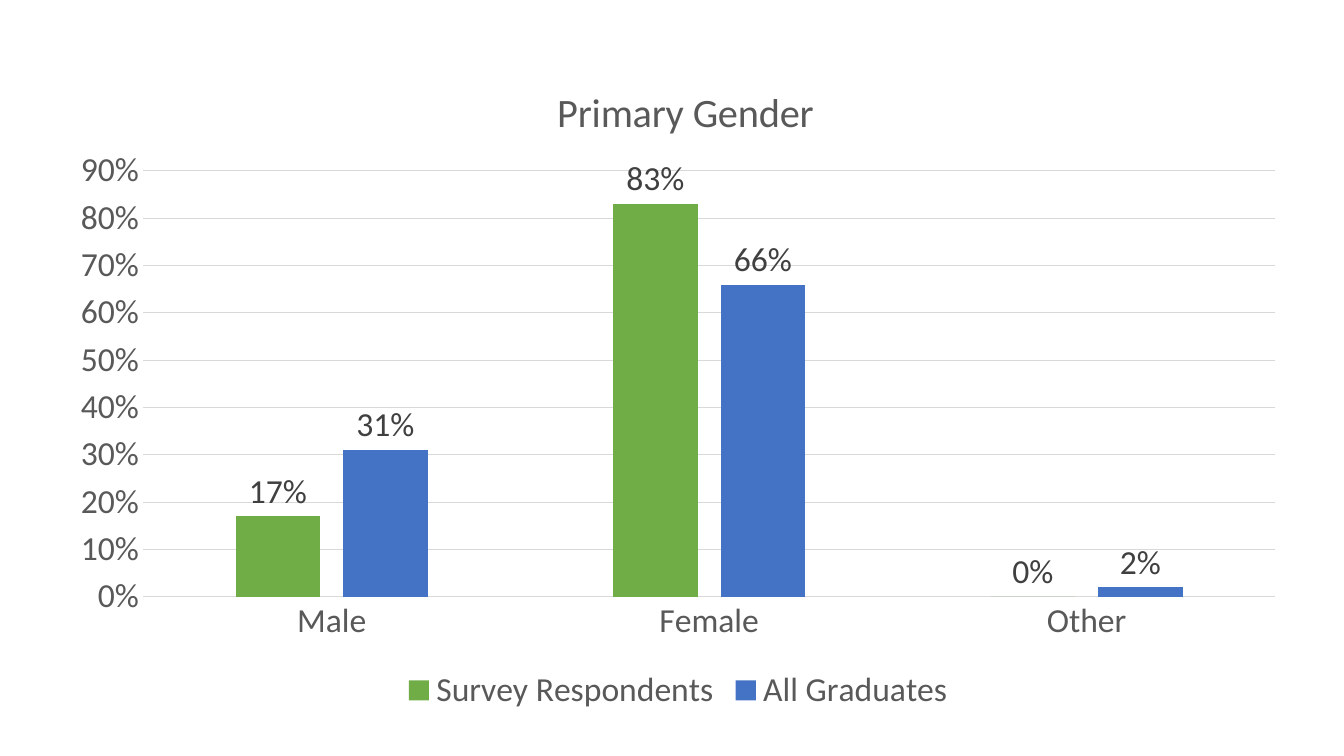
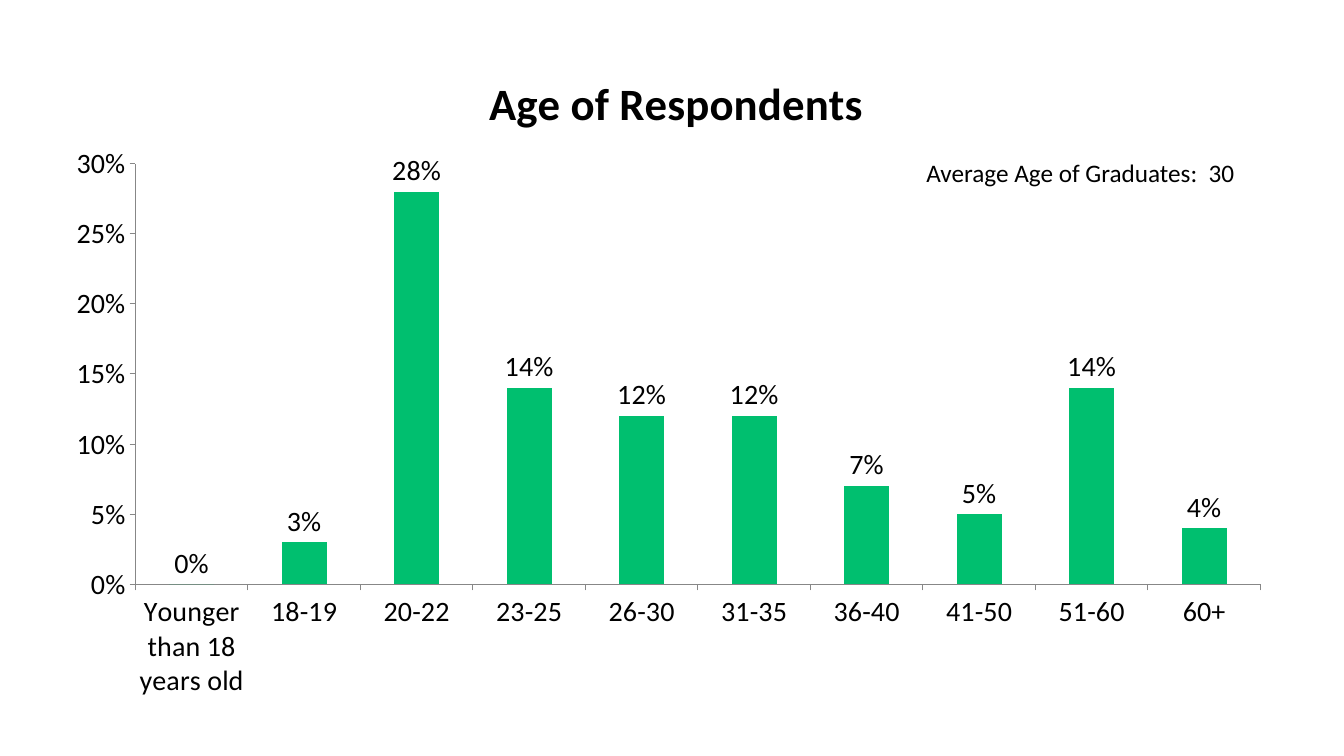
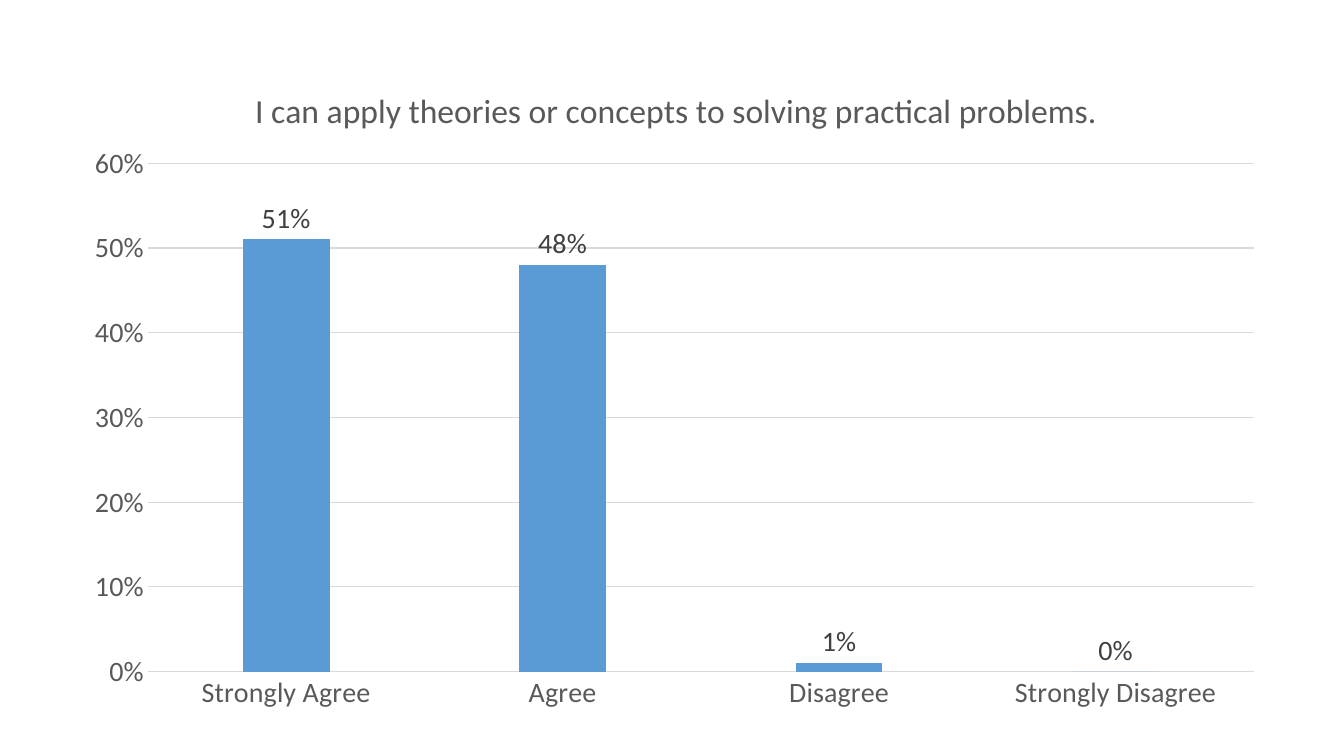
from lxml import etree
from pptx import Presentation
from pptx import util as u
from pptx.chart import data as chart_data
from pptx.dml.color import RGBColor
from pptx.enum import chart as ch, text
from pptx.oxml import ns

# Shared look
FONT = "Calibri"
BLACK = RGBColor(0x00, 0x00, 0x00)
TITLE_GREY = RGBColor(0x59, 0x59, 0x59)
LABEL_GREY = RGBColor(0x40, 0x40, 0x40)
GRID_GREY = RGBColor(0xD9, 0xD9, 0xD9)
AXIS_GREY = RGBColor(0x87, 0x87, 0x87)
LEAF = RGBColor(0x70, 0xAD, 0x47)
BLUE = RGBColor(0x44, 0x72, 0xC4)
EMERALD = RGBColor(0x00, 0xBF, 0x6F)
SKY = RGBColor(0x5B, 0x9B, 0xD5)

SOFT = {"text": TITLE_GREY, "label": LABEL_GREY, "line": GRID_GREY, "grid": True,
        "tick": ch.XL_TICK_MARK.NONE, "gap": 219, "overlap": -27, "bold": False}
PLAIN = {"text": BLACK, "label": BLACK, "line": AXIS_GREY, "grid": False,
         "tick": ch.XL_TICK_MARK.OUTSIDE, "gap": 150, "overlap": 0, "bold": True}

# Places are percentages of the slide: left, top, width, height
CHARTS = [
    {"title": "Primary Gender", "title_size": 28.8, "size": 24, "style": SOFT,
     "frame": (4.13, 6.13, 92.65, 88.8), "plot": (10.64, 22.62, 84.26, 56.35),
     "title_at": (40.92, 10.32), "top": 0.9, "step": 0.1, "legend": True,
     "categories": ["Male", "Female", "Other"],
     "series": [("Survey Respondents", LEAF, (0.17, 0.83, 0)),
                ("All Graduates", BLUE, (0.31, 0.66, 0.02))]},
    {"title": "Age of Respondents", "title_size": 32, "size": 20, "style": PLAIN,
     "frame": (3.83, 4.13, 91.82, 90), "plot": (10.08, 21.63, 83.71, 55.69),
     "title_at": (35.79, 8.47), "top": 0.3, "step": 0.05, "legend": False,
     "categories": ["Younger than 18 years old", "18-19", "20-22", "23-25", "26-30",
                    "31-35", "36-40", "41-50", "51-60", "60+"],
     "series": [("Series 1", EMERALD,
                 (0, 0.03, 0.28, 0.14, 0.12, 0.12, 0.07, 0.05, 0.14, 0.04))],
     "note": ("Average Age of Graduates:  30", (68.19, 20.13, 24.68, 5.33))},
    {"title": "I can apply theories or concepts to solving practical problems.",
     "title_size": 24, "size": 20, "style": SOFT,
     "frame": (5.18, 7.07, 89.95, 88.67), "plot": (11.01, 21.6, 82.29, 67.26),
     "title_at": (18.53, 10.85), "top": 0.6, "step": 0.1, "legend": False,
     "categories": ["Strongly Agree", "Agree", "Disagree", "Strongly Disagree"],
     "series": [("Series 1", SKY, (0.51, 0.48, 0.01, 0))]},
]


def set_font(font, size, color, bold=False):
    for name, value in {"name": FONT, "size": u.Pt(size), "bold": bold}.items():
        setattr(font, name, value)
    font.color.rgb = color


def place(parent, position, frame, box):
    """Fix a chart part at a box given in slide percentages."""
    for old in parent.findall(ns.qn("c:layout")):
        parent.remove(old)
    layout = etree.Element(ns.qn("c:layout"))
    parent.insert(position, layout)
    manual = etree.SubElement(layout, ns.qn("c:manualLayout"))
    values = {"xMode": "edge", "yMode": "edge",
              "x": (box[0] - frame[0]) / frame[2], "y": (box[1] - frame[1]) / frame[3]}
    if len(box) == 4:
        values = {"layoutTarget": "inner", **values,
                  "w": box[2] / frame[2], "h": box[3] / frame[3]}
    for tag, value in values.items():
        etree.SubElement(manual, ns.qn("c:" + tag)).set("val", str(value))


presentation = Presentation()
presentation.slide_width = u.Inches(13.33)
presentation.slide_height = u.Inches(7.5)
percent = [presentation.slide_width / 100, presentation.slide_height / 100] * 2

for item in CHARTS:
    slide = presentation.slides.add_slide(presentation.slide_layouts[6])
    style, size, frame = item["style"], item["size"], item["frame"]

    # Chart and its values
    values = chart_data.CategoryChartData(number_format="0%")
    values.categories = item["categories"]
    for name, color, numbers in item["series"]:
        values.add_series(name, numbers)
    bounds = [int(share * unit) for share, unit in zip(frame, percent)]
    chart = slide.shapes.add_chart(ch.XL_CHART_TYPE.COLUMN_CLUSTERED, *bounds, values).chart
    set_font(chart.font, size, BLACK)

    # Title
    chart.has_title = True
    title = chart.chart_title
    title.include_in_layout = False
    paragraph = title.text_frame.paragraphs[0]
    run = paragraph.add_run()
    run.text = item["title"]
    set_font(run.font, item["title_size"], style["text"], style["bold"])
    place(title._element, 1, frame, item["title_at"])

    # Axes
    for axis in (chart.category_axis, chart.value_axis):
        axis.major_tick_mark = style["tick"]
        axis.minor_tick_mark = ch.XL_TICK_MARK.NONE
        set_font(axis.tick_labels.font, size, style["text"])
        axis.format.line.width = u.Pt(0.75)
        axis.format.line.color.rgb = style["line"]
    axis = chart.value_axis
    scale = {"minimum_scale": 0, "maximum_scale": item["top"],
             "major_unit": item["step"], "has_major_gridlines": style["grid"]}
    for name, value in scale.items():
        setattr(axis, name, value)
    axis.tick_labels.number_format = "0%"
    axis.tick_labels.number_format_is_linked = False
    if style["grid"]:
        axis.format.line.fill.background()
        axis.major_gridlines.format.line.width = u.Pt(0.75)
        axis.major_gridlines.format.line.color.rgb = style["line"]

    # Columns and their labels
    plot = chart.plots[0]
    for name, value in {"gap_width": style["gap"], "overlap": style["overlap"],
                        "vary_by_categories": False}.items():
        setattr(plot, name, value)
    for series, (name, color, numbers) in zip(plot.series, item["series"]):
        series.format.fill.solid()
        series.format.fill.fore_color.rgb = color
        series.invert_if_negative = False
        labels = series.data_labels
        for key, value in {"show_value": True, "number_format": "0%",
                           "number_format_is_linked": False,
                           "position": ch.XL_LABEL_POSITION.OUTSIDE_END}.items():
            setattr(labels, key, value)
        set_font(labels.font, size, style["label"])
    place(chart._chartSpace.chart.plotArea, 0, frame, item["plot"])

    # Legend
    chart.has_legend = item["legend"]
    if item["legend"]:
        chart.legend.position = ch.XL_LEGEND_POSITION.BOTTOM
        chart.legend.include_in_layout = False
        set_font(chart.legend.font, size, style["text"])

    # Note beside the columns
    if "note" in item:
        words, box = item["note"]
        bounds = [int(share * unit) for share, unit in zip(box, percent)]
        text_frame = slide.shapes.add_textbox(*bounds).text_frame
        text_frame.word_wrap = False
        text_frame.auto_size = text.MSO_AUTO_SIZE.SHAPE_TO_FIT_TEXT
        run = text_frame.paragraphs[0].add_run()
        run.text = words
        set_font(run.font, 18, BLACK)

presentation.save("out.pptx")
